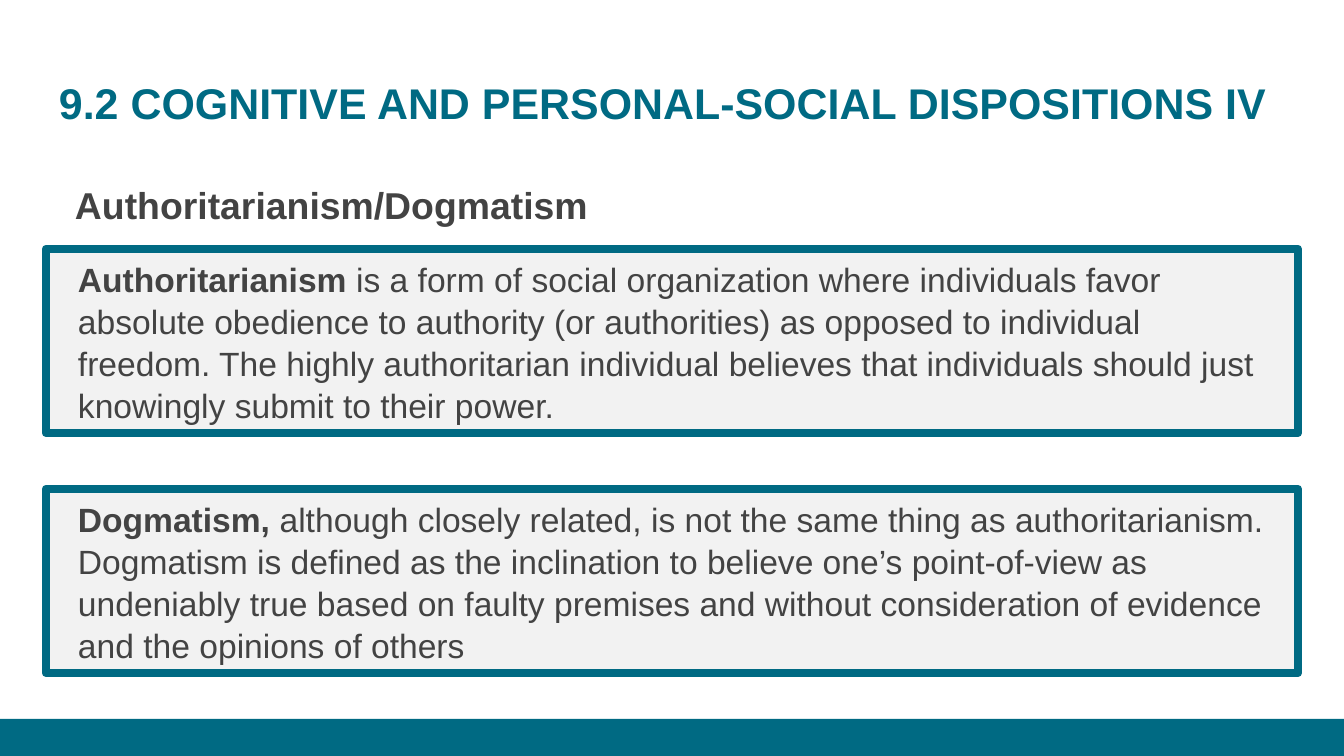
from pptx import Presentation
from pptx.dml.color import RGBColor
from pptx.enum.shapes import MSO_SHAPE
from pptx.enum.text import MSO_ANCHOR, MSO_AUTO_SIZE, PP_ALIGN
from pptx.util import Emu, Pt

# Content: each paragraph is a list of (text, bold) runs
TITLE = [("9.2 COGNITIVE AND PERSONAL-SOCIAL DISPOSITIONS IV", True)]
HEADING = [("Authoritarianism/Dogmatism", True)]
DEFINITIONS = [
    [("Authoritarianism", True),
     (" is a form of social organization where individuals favor absolute "
      "obedience to authority (or authorities) as opposed to individual freedom. "
      "The highly authoritarian individual believes that individuals should just "
      "knowingly submit to their power.", False)],
    [("Dogmatism,", True),
     (" although closely related, is not the same thing as authoritarianism. "
      "Dogmatism is defined as the inclination to believe one’s point-of-view as "
      "undeniably true based on faulty premises and without consideration of "
      "evidence and the opinions of others", False)],
]

THEME = {
    "font": "Arial",
    "teal": RGBColor(0x00, 0x6A, 0x83),
    "text": RGBColor(0x43, 0x43, 0x43),
    "panel": RGBColor(0xF2, 0xF2, 0xF2),
    "title_size": Pt(23),
    "heading_size": Pt(20),
    "body_size": Pt(18),
    "border": Pt(4.5),
}

# Layout in px
PAGE_WIDTH, PAGE_HEIGHT = 1344, 756
LEFT, WIDTH = 46, 1252
BAND_TOP = 719
PANEL_TOP, PANEL_HEIGHT, PANEL_PITCH = 249, 184, 240


def px(value):
    return Emu(round(value * 914400 / 134.4))


def place(box, left, top, width, height):
    box.left, box.top, box.width, box.height = map(px, (left, top, width, height))


def write(box, runs, size, color, insets, anchor=MSO_ANCHOR.TOP, spacing=1.0):
    """Fill a box with one left-aligned paragraph; insets are left, top, right, bottom."""
    frame = box.text_frame
    frame.word_wrap = True
    frame.auto_size = MSO_AUTO_SIZE.NONE
    frame.vertical_anchor = anchor
    (frame.margin_left, frame.margin_top,
     frame.margin_right, frame.margin_bottom) = map(px, insets)
    para = frame.paragraphs[0]
    para.alignment = PP_ALIGN.LEFT
    para.line_spacing = spacing
    for text, bold in runs:
        span = para.add_run()
        span.text = text
        span.font.name = THEME["font"]
        span.font.size = size
        span.font.bold = bold
        span.font.color.rgb = color


def add_rectangle(page, left, top, width, height, fill, line=None):
    box = page.shapes.add_shape(MSO_SHAPE.RECTANGLE,
                                *map(px, (left, top, width, height)))
    box.shadow.inherit = False
    box.fill.solid()
    box.fill.fore_color.rgb = fill
    if line is None:
        box.line.fill.background()
    else:
        box.line.color.rgb = line
        box.line.width = THEME["border"]
    return box


def main():
    deck = Presentation()
    deck.slide_width, deck.slide_height = px(PAGE_WIDTH), px(PAGE_HEIGHT)
    page = deck.slides.add_slide(deck.slide_layouts[5])

    # Bottom band
    add_rectangle(page, 0, BAND_TOP, PAGE_WIDTH, PAGE_HEIGHT - BAND_TOP, THEME["teal"])

    # Title
    title = page.shapes.title
    place(title, LEFT, 60, WIDTH, 89)
    write(title, TITLE, THEME["title_size"], THEME["teal"], (13, 17, 13, 13))

    # Heading
    heading = page.shapes.add_textbox(*map(px, (LEFT, 164, WIDTH, 491)))
    write(heading, HEADING, THEME["heading_size"], THEME["text"], (29, 18, 13, 13))

    # Definition panels
    for index, runs in enumerate(DEFINITIONS):
        panel = add_rectangle(page, LEFT, PANEL_TOP + index * PANEL_PITCH, WIDTH,
                              PANEL_HEIGHT, THEME["panel"], THEME["teal"])
        write(panel, runs, THEME["body_size"], THEME["text"], (32, 11, 16, 11),
              MSO_ANCHOR.MIDDLE, 1.04)

    deck.save("out.pptx")


if __name__ == "__main__":
    main()
